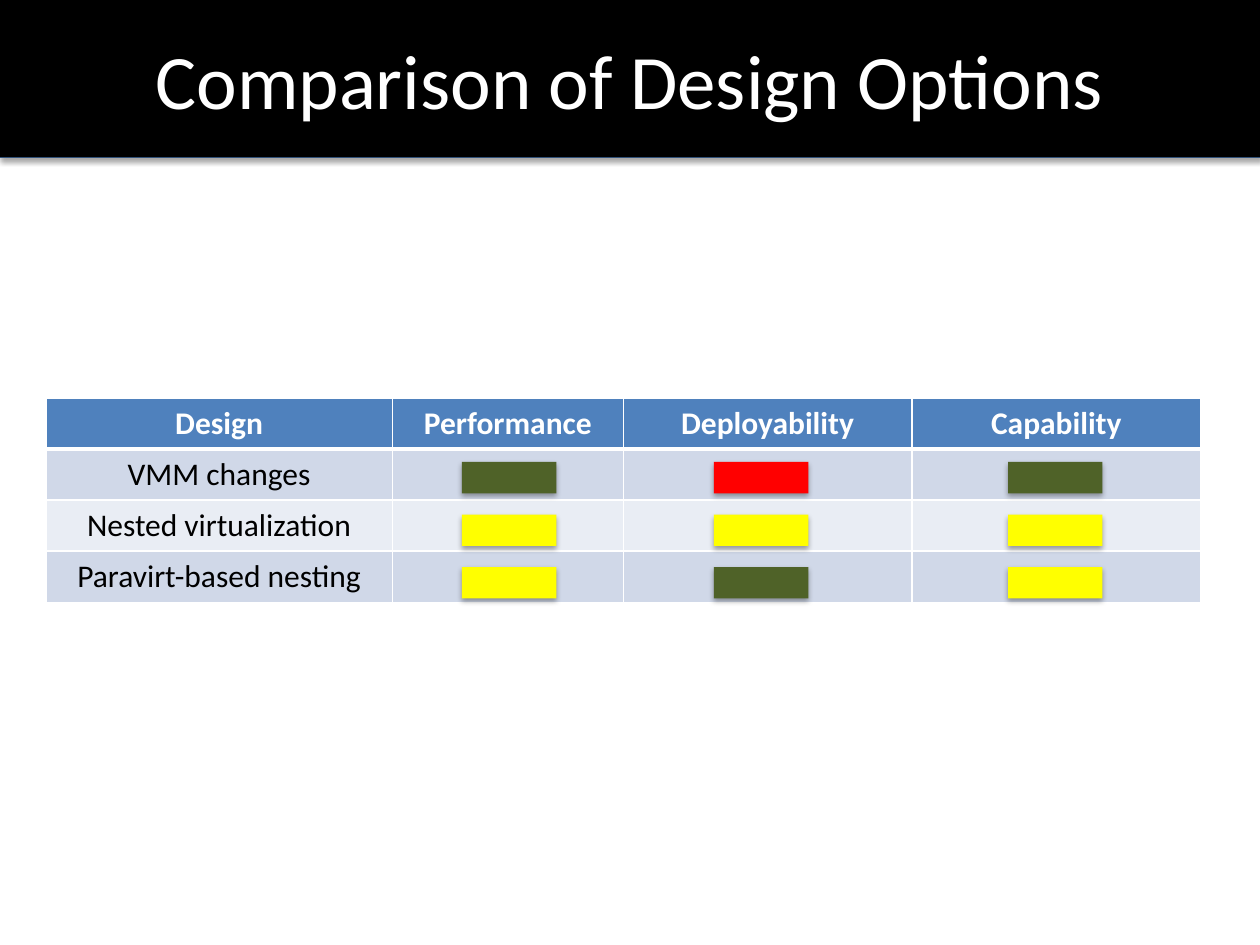
import pptx
import pptx.util
import pptx.dml.color
import pptx.enum.shapes
import pptx.enum.text
import pptx.oxml
from pptx.oxml.ns import nsdecls

Pt = pptx.util.Pt

# Content
TITLE = "Comparison of Design Options"
HEADERS = ["Design", "Performance", "Deployability", "Capability"]
RATINGS = [
    ("VMM changes", "good", "poor", "good"),
    ("Nested virtualization", "fair", "fair", "fair"),
    ("Paravirt-based nesting", "fair", "good", "fair"),
]
RATING_COLOURS = {"good": "4F6228", "fair": "FFFF00", "poor": "FF0000"}
BAND_FILLS = ["D0D8E8", "E9EDF4"]

# Layout in points
SLIDE_WIDTH, SLIDE_HEIGHT = 720, 540
TITLE_HEIGHT = 90
TABLE_LEFT, TABLE_TOP, ROW_HEIGHT = 26.2, 227.4, 29.1
COLUMN_WIDTHS = [198, 132, 165, 165]
MARKER_LEFTS = [264, 408, 576]
MARKER_TOP, MARKER_STEP = 264, 30
MARKER_WIDTH, MARKER_HEIGHT = 54, 18


def colour(code):
    return pptx.dml.color.RGBColor.from_string(code)


def fill_solid(target, code):
    target.fill.solid()
    target.fill.fore_color.rgb = colour(code)


def write(frame, text, size, code, bold=False):
    frame.vertical_anchor = pptx.enum.text.MSO_ANCHOR.MIDDLE
    para = frame.paragraphs[0]
    para.alignment = pptx.enum.text.PP_ALIGN.CENTER
    span = para.add_run()
    span.text = text
    formats = {"name": "Calibri", "size": Pt(size), "bold": bold}
    for key, value in formats.items():
        setattr(span.font, key, value)
    span.font.color.rgb = colour(code)


def add_box(page, left, top, width, height):
    """Add a rectangle with a soft shadow below it."""
    box = page.shapes.add_shape(
        pptx.enum.shapes.MSO_SHAPE.RECTANGLE, Pt(left), Pt(top), Pt(width), Pt(height))
    box.line.fill.background()
    box.shadow.inherit = False
    effects = box.element.spPr.find(pptx.oxml.ns.qn("a:effectLst"))
    effects.append(pptx.oxml.parse_xml(
        f'<a:outerShdw {nsdecls("a")} blurRad="{Pt(3.1)}" dist="{Pt(1.8)}" '
        'dir="5400000" rotWithShape="0"><a:srgbClr val="000000">'
        '<a:alpha val="35000"/></a:srgbClr></a:outerShdw>'))
    return box


def set_borders(cell, widths):
    properties = cell._tc.get_or_add_tcPr()
    for index, (side, width) in enumerate(widths.items()):
        properties.insert(index, pptx.oxml.parse_xml(
            f'<a:ln{side} {nsdecls("a")} w="{Pt(width)}"><a:solidFill>'
            f'<a:srgbClr val="FFFFFF"/></a:solidFill></a:ln{side}>'))


def add_title(page):
    band = add_box(page, 0, 0, SLIDE_WIDTH, TITLE_HEIGHT)
    band.fill.gradient()
    band.fill.gradient_angle = 90
    for stop, code in zip(band.fill.gradient_stops, ["3F80CE", "A4C4FF"]):
        stop.color.rgb = colour(code)
    band.line.color.rgb = colour("4B7EBC")
    band.line.width = Pt(0.75)

    title = page.shapes.title
    place = {"left": 0, "top": 0, "width": Pt(SLIDE_WIDTH), "height": Pt(TITLE_HEIGHT)}
    for key, value in place.items():
        setattr(title, key, value)
    fill_solid(title, "000000")
    write(title.text_frame, TITLE, 44, "FFFFFF")
    band.element.addnext(title.element)  # title in front of its band


def add_ratings_table(page):
    rows = [HEADERS] + [[rating[0], "", "", ""] for rating in RATINGS]
    table = page.shapes.add_table(
        len(rows), len(HEADERS), Pt(TABLE_LEFT), Pt(TABLE_TOP),
        Pt(sum(COLUMN_WIDTHS)), Pt(ROW_HEIGHT * len(rows))).table
    for column, width in zip(table.columns, COLUMN_WIDTHS):
        column.width = Pt(width)
    for r, texts in enumerate(rows):
        header = r == 0
        table.rows[r].height = Pt(ROW_HEIGHT)
        for c, text in enumerate(texts):
            cell = table.cell(r, c)
            fill_solid(cell, "4F81BD" if header else BAND_FILLS[(r - 1) % 2])
            set_borders(cell, {"L": 1, "R": 1, "T": 3 if r == 1 else 1,
                               "B": 3 if header else 1})
            if text:
                write(cell.text_frame, text, 18, "FFFFFF" if header else "000000", header)


def add_markers(page):
    for r, (_, *ratings) in enumerate(RATINGS):
        for left, rating in zip(MARKER_LEFTS, ratings):
            marker = add_box(page, left, MARKER_TOP + r * MARKER_STEP,
                             MARKER_WIDTH, MARKER_HEIGHT)
            fill_solid(marker, RATING_COLOURS[rating])


def main():
    deck = pptx.Presentation()
    deck.slide_width, deck.slide_height = Pt(SLIDE_WIDTH), Pt(SLIDE_HEIGHT)
    page = deck.slides.add_slide(deck.slide_layouts[5])
    add_title(page)
    add_ratings_table(page)
    add_markers(page)
    deck.save("out.pptx")


if __name__ == "__main__":
    main()
